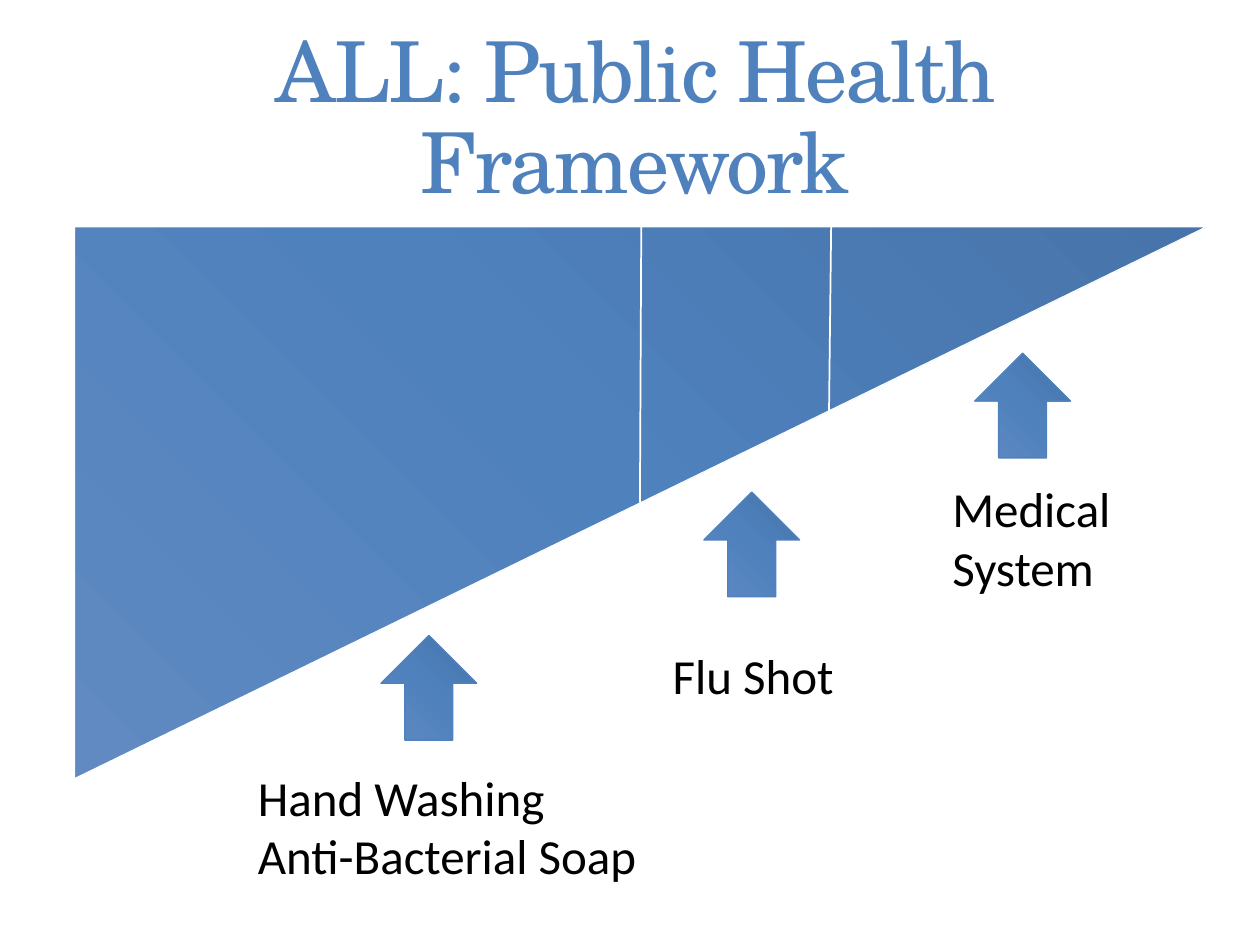
from copy import deepcopy
from typing import NamedTuple

from lxml import etree
from pptx import Presentation
from pptx import util as u
from pptx.dml.color import RGBColor
from pptx.enum import shapes, text
from pptx.oxml.ns import qn

BLUE, WHITE, BLACK = "4F81BD", "FFFFFF", "000000"
GRADIENT = [(0, "608AC1"), (0.5, BLUE), (1, "4774AA")]


class Box(NamedTuple):
    """Position and size in centimetres."""
    left: float
    top: float
    width: float
    height: float


class Stage(NamedTuple):
    """A level of care: its arrow position and its label."""
    arrow_left: float
    arrow_top: float
    label_box: Box
    label: str


class Divider(NamedTuple):
    """Ends of a line across the wedge, in centimetres."""
    x1: float
    y1: float
    x2: float
    y2: float


STAGES = [
    Stage(19.56, 7.21, Box(18.95, 9.53, 4.27, 2.64), "Medical System"),
    Stage(14.1, 10.01, Box(13.31, 12.88, 4.27, 1.45), "Flu Shot"),
    Stage(7.59, 12.9, Box(4.95, 15.34, 8.92, 2.64),
          "Hand Washing\nAnti-Bacterial Soap"),
]
DIVIDERS = [Divider(12.93, 4.01, 12.9, 10.13), Divider(16.76, 4.14, 16.71, 8.46)]


def paint(color, hex_value: str) -> None:
    color.rgb = RGBColor.from_string(hex_value)


def add_gradient_shape(slide, kind, box: Box, outline: str, rotation: float):
    shape = slide.shapes.add_shape(kind, *map(u.Cm, box))
    shape.rotation = rotation
    shape.shadow.inherit = False
    paint_line(shape.line, outline, 0.75)
    shape.fill.gradient()
    shape.fill.gradient_angle = 315  # counter-clockwise: 45 degrees downwards
    first = shape.fill._fill._gradFill.gsLst[0]
    first.addnext(deepcopy(first))
    for stop, (position, hex_value) in zip(shape.fill.gradient_stops, GRADIENT):
        stop.position = position
        paint(stop.color, hex_value)
    return shape


def paint_line(line, hex_value: str, width: float) -> None:
    line.fill.solid()
    paint(line.fill.fore_color, hex_value)
    line.width = u.Pt(width)


def add_divider(slide, divider: Divider) -> None:
    line = slide.shapes.add_connector(
        shapes.MSO_CONNECTOR.STRAIGHT, *map(u.Cm, divider))
    paint_line(line.line, WHITE, 1)
    etree.SubElement(line._element.spPr, qn("a:effectLst"))


def add_text(slide, content: str, box: Box, *, size: float = 28,
             font: str = "Calibri", color: str = BLACK,
             align=text.PP_ALIGN.LEFT, anchor=text.MSO_ANCHOR.TOP,
             line_spacing: float = 1.0, tracking: float = 0) -> None:
    frame = slide.shapes.add_textbox(*map(u.Cm, box)).text_frame
    frame.word_wrap = True
    frame.vertical_anchor = anchor
    frame.text = content
    for paragraph in frame.paragraphs:
        paragraph.alignment = align
        paragraph.line_spacing = line_spacing
        for run in paragraph.runs:
            run.font.name = font
            run.font.size = u.Pt(size)
            paint(run.font.color, color)
            if tracking:
                run.font._element.set("spc", str(round(tracking * 100)))


def main() -> None:
    prs = Presentation()
    prs.slide_width, prs.slide_height = u.Cm(25.4), u.Cm(19.05)
    slide = prs.slides.add_slide(prs.slide_layouts[6])

    # Title
    add_text(slide, "ALL: Public Health Framework", Box(1.27, 0.84, 23.06, 3.2),
             size=48, font="TeX Gyre Schola", color=BLUE,
             align=text.PP_ALIGN.CENTER, anchor=text.MSO_ANCHOR.MIDDLE,
             line_spacing=0.9, tracking=-1.2)

    # Wedge, narrowing to the right, and its dividers
    wedge = add_gradient_shape(slide, shapes.MSO_SHAPE.RIGHT_TRIANGLE,
                               Box(1.5, 4.57, 22.83, 11.13), WHITE, 180)
    wedge._element.spPr.xfrm.set("flipH", "1")
    for divider in DIVIDERS:
        add_divider(slide, divider)

    # Arrows pointing up at the wedge, with their labels
    for stage in STAGES:
        add_gradient_shape(slide, shapes.MSO_SHAPE.RIGHT_ARROW,
                           Box(stage.arrow_left, stage.arrow_top, 2.11, 1.93),
                           BLUE, 270)
        add_text(slide, stage.label, stage.label_box)

    prs.save("out.pptx")


if __name__ == "__main__":
    main()
